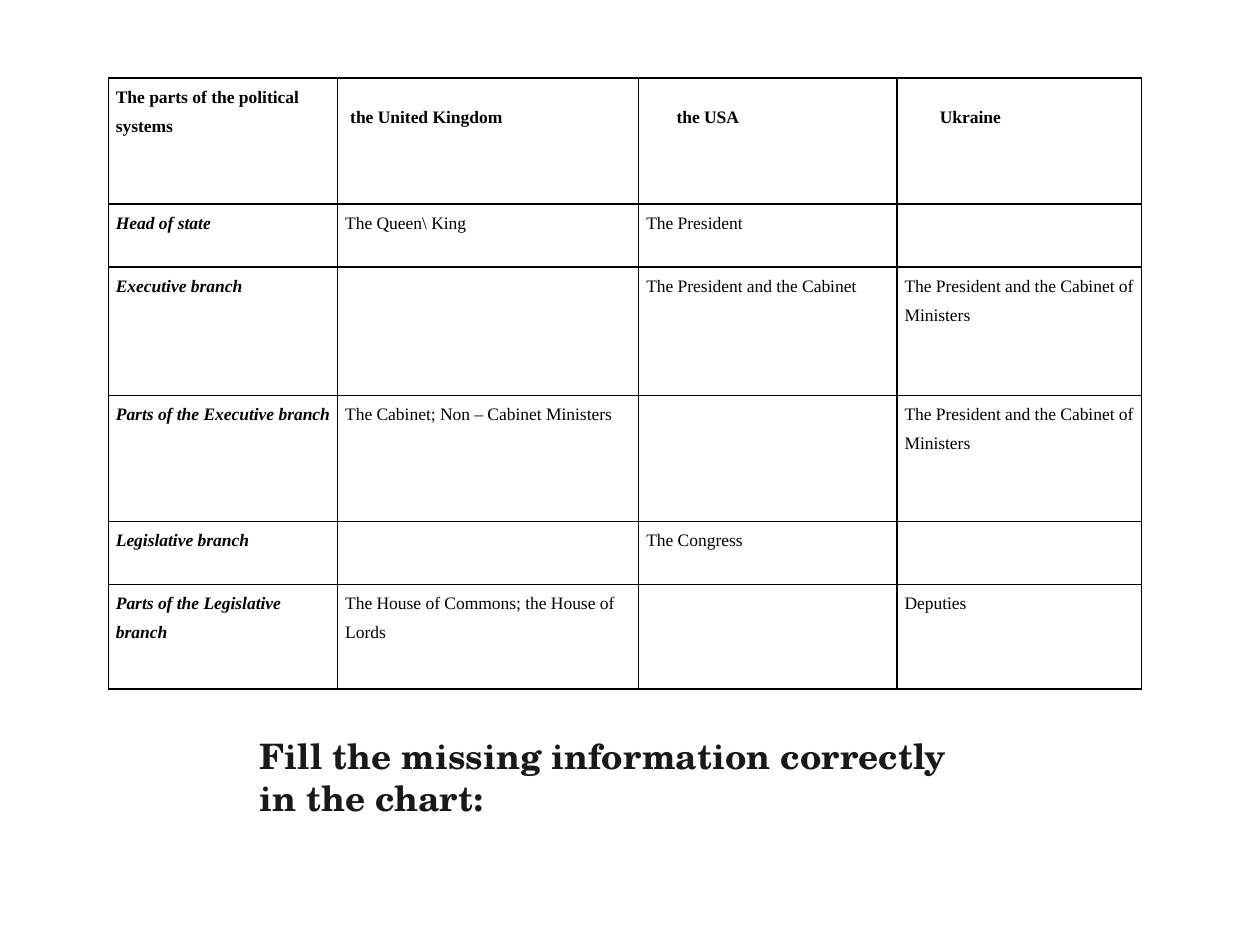
from lxml.etree import SubElement
from pptx import Presentation
from pptx.dml.color import RGBColor
from pptx.enum.text import MSO_ANCHOR, MSO_AUTO_SIZE, PP_ALIGN
from pptx.oxml.ns import qn
from pptx.util import Inches, Pt

BLACK = RGBColor(0x00, 0x00, 0x00)
CHARCOAL = RGBColor(0x19, 0x19, 0x19)
WHITE = RGBColor(0xFF, 0xFF, 0xFF)

TABLE_FONT = "Times New Roman"
TITLE_FONT = "TeX Gyre Schola"

COLUMN_WIDTHS = [1.82, 2.39, 2.05, 1.94]
ROW_HEIGHTS = [1, 0.5, 1.02, 1, 0.5, 0.83]
SIDE_MARGIN = 0.06
HEADER_INDENTS = [SIDE_MARGIN, 0.1, 0.3, 0.34]
COUNTRY_DROP = 0.16  # country names sit lower than the first heading

SYSTEMS = [
    ["The parts of the political systems", "the United Kingdom", "the USA", "Ukraine"],
    ["Head of state", "The Queen\\ King", "The President", ""],
    ["Executive branch", "", "The President and the Cabinet",
     "The President and the Cabinet of Ministers"],
    ["Parts of the Executive branch", "The Cabinet; Non – Cabinet Ministers", "",
     "The President and the Cabinet of Ministers"],
    ["Legislative branch", "", "The Congress", ""],
    ["Parts of the Legislative branch", "The House of Commons; the House of Lords",
     "", "Deputies"],
]


def add_run(paragraph, text, font_name, size, color, bold=False, italic=False):
    run = paragraph.add_run()
    run.text = text
    font = run.font
    font.name, font.size = font_name, Pt(size)
    font.bold, font.italic = bold, italic
    font.color.rgb = color


def add_borders(cell, color, width):
    properties = cell._tc.get_or_add_tcPr()
    for side in ("lnL", "lnR", "lnT", "lnB"):
        line = SubElement(properties, qn(f"a:{side}"), w=str(Pt(width)))
        fill = SubElement(line, qn("a:solidFill"))
        SubElement(fill, qn("a:srgbClr"), val=str(color))


def fill_cell(cell, text, row, column):
    is_header, is_label = row == 0, column == 0
    cell.margin_left = Inches(HEADER_INDENTS[column] if is_header else SIDE_MARGIN)
    cell.margin_right = Inches(SIDE_MARGIN)
    cell.margin_top = Inches(COUNTRY_DROP if is_header and not is_label else 0)
    cell.margin_bottom = 0
    # Borders come before the fill in the cell's properties
    add_borders(cell, BLACK, 1)
    cell.fill.solid()
    cell.fill.fore_color.rgb = WHITE
    paragraph = cell.text_frame.paragraphs[0]
    paragraph.line_spacing = 1.5
    if text:
        add_run(paragraph, text, TABLE_FONT, 10, BLACK,
                bold=is_header or is_label, italic=is_label and not is_header)


def add_systems_table(slide):
    frame = slide.shapes.add_table(
        len(ROW_HEIGHTS), len(COLUMN_WIDTHS), Inches(0.86), Inches(0.62),
        Inches(sum(COLUMN_WIDTHS)), Inches(sum(ROW_HEIGHTS)))
    systems = frame.table
    systems.first_row = systems.horz_banding = False
    for column, width in zip(systems.columns, COLUMN_WIDTHS):
        column.width = Inches(width)
    for row, height in zip(systems.rows, ROW_HEIGHTS):
        row.height = Inches(height)
    for r, texts in enumerate(SYSTEMS):
        for c, text in enumerate(texts):
            fill_cell(systems.cell(r, c), text, r, c)


def set_instruction(slide, text):
    instruction = slide.shapes.title
    instruction.left, instruction.top = Inches(1.96), Inches(5.55)
    instruction.width, instruction.height = Inches(6), Inches(1.33)
    frame = instruction.text_frame
    frame.word_wrap = True
    frame.auto_size = MSO_AUTO_SIZE.NONE
    frame.vertical_anchor = MSO_ANCHOR.BOTTOM
    frame.margin_bottom = Inches(0.38)
    paragraph = frame.paragraphs[0]
    paragraph.alignment = PP_ALIGN.LEFT
    add_run(paragraph, text, TITLE_FONT, 20, CHARCOAL, bold=True)


def main():
    deck = Presentation()
    deck.slide_width, deck.slide_height = Inches(10), Inches(7.5)
    slide = deck.slides.add_slide(deck.slide_layouts[5])  # title only

    # Task below the chart
    set_instruction(slide, "Fill the missing information correctly in the chart:")
    # Comparison of the political systems
    add_systems_table(slide)

    deck.save("out.pptx")


if __name__ == "__main__":
    main()
